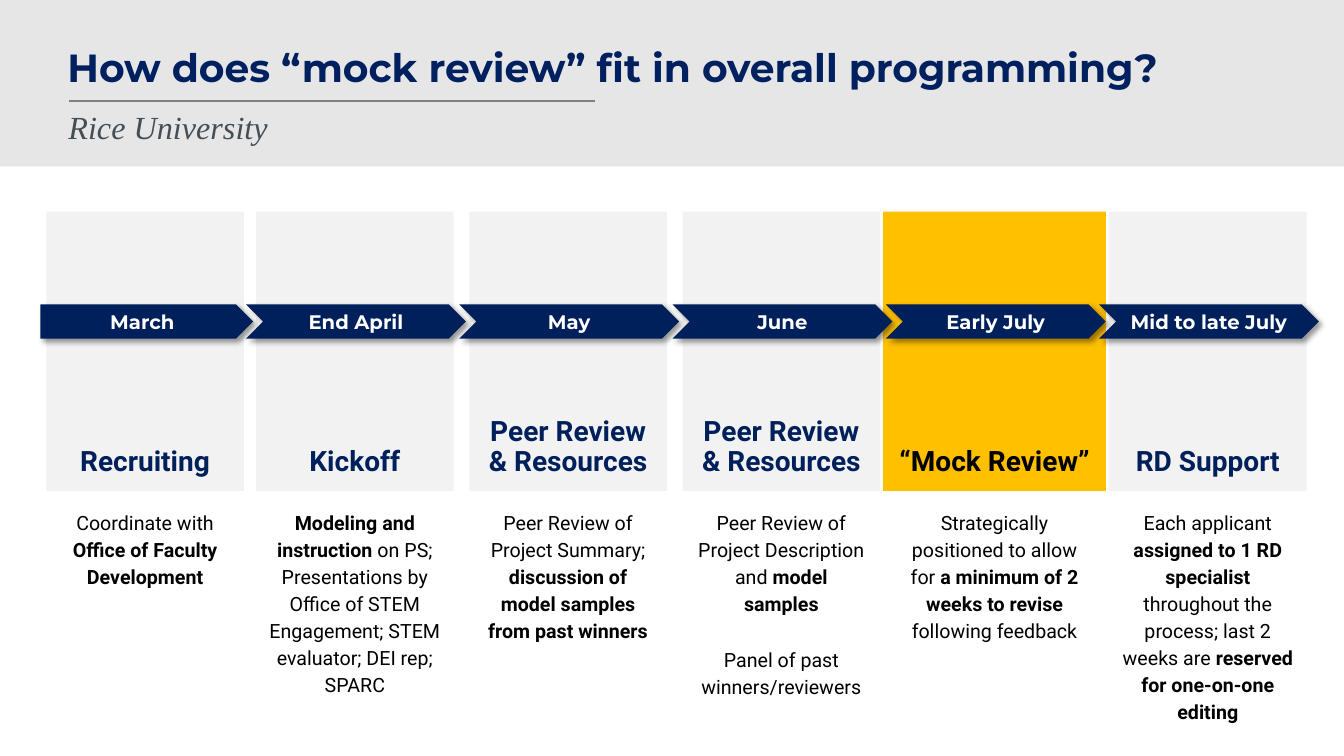
from dataclasses import dataclass

from lxml import etree
from pptx import Presentation
from pptx.dml.color import RGBColor
from pptx.enum.shapes import MSO_CONNECTOR, MSO_SHAPE
from pptx.enum.text import MSO_ANCHOR, PP_ALIGN
from pptx.oxml import parse_xml
from pptx.oxml.ns import nsdecls, qn
from pptx.util import Inches, Pt

RECTANGLE = MSO_SHAPE.RECTANGLE
PENTAGON = MSO_SHAPE.PENTAGON
CHEVRON = MSO_SHAPE.CHEVRON
STRAIGHT = MSO_CONNECTOR.STRAIGHT
TOP, MIDDLE, BOTTOM = MSO_ANCHOR.TOP, MSO_ANCHOR.MIDDLE, MSO_ANCHOR.BOTTOM
LEFT, CENTER = PP_ALIGN.LEFT, PP_ALIGN.CENTER


@dataclass(frozen=True)
class Theme:
    title_navy: str = "002060"
    navy: str = "00205B"
    gold: str = "FFC000"
    band: str = "E6E6E6"
    card: str = "F2F2F2"
    rule: str = "808080"
    subtitle: str = "454D55"
    black: str = "000000"
    white: str = "FFFFFF"
    heading_font: str = "Montserrat"
    body_font: str = "Roboto"
    subtitle_font: str = "Times New Roman"
    title_size: int = 28
    subtitle_size: int = 23
    stage_size: int = 20
    detail_size: int = 14


THEME = Theme()

# Month, stage name, detail paragraphs as (text, bold) runs
STAGES = [
    ("March", "Recruiting",
     [[("Coordinate with ", False), ("Office of Faculty Development", True)]]),
    ("End April", "Kickoff",
     [[("Modeling and instruction ", True),
       ("on PS; Presentations by Office of STEM Engagement; "
        "STEM evaluator; DEI rep; SPARC", False)]]),
    ("May", "Peer Review & Resources",
     [[("Peer Review of Project Summary; ", False),
       ("discussion of model samples from past winners", True)]]),
    ("June", "Peer Review & Resources",
     [[("Peer Review of Project Description and ", False), ("model samples", True)],
      [("Panel of past winners/reviewers", False)]]),
    ("Early July", "“Mock Review”",
     [[("Strategically positioned to allow for ", False),
       ("a minimum of 2 weeks to revise ", True), ("following feedback", False)]]),
    ("Mid to late July", "RD Support",
     [[("Each applicant ", False), ("assigned to 1 RD specialist ", True),
       ("throughout the process; last 2 weeks are ", False),
       ("reserved for one-on-one editing", True)]]),
]
HIGHLIGHT = 4
CARD_WIDTH = 1.96
CARD_LEFTS = [0.46] + [2.54 + 2.115 * step for step in range(5)]


def rgb(value):
    return RGBColor.from_string(value)


def add_block(page, kind, box, fill):
    block = page.shapes.add_shape(kind, *map(Inches, box))
    block.shadow.inherit = False
    block.fill.solid()
    block.fill.fore_color.rgb = rgb(fill)
    block.line.fill.background()
    return block


def write(shape, paragraphs, font, size, color, align=CENTER, anchor=TOP,
          insets=(0.13, 0.13), spacing=1.0, italic=False):
    """Fill a shape with paragraphs of (text, bold) runs."""
    frame = shape.text_frame
    frame.word_wrap = True
    frame.vertical_anchor = anchor
    frame.margin_left = frame.margin_right = Inches(insets[0])
    frame.margin_top = frame.margin_bottom = Inches(insets[1])
    for index, runs in enumerate(paragraphs):
        para = frame.add_paragraph() if index else frame.paragraphs[0]
        para.alignment = align
        para.line_spacing = spacing
        if index:
            para.space_before = Pt(21)
        for text, bold in runs:
            span = para.add_run()
            span.text = text
            span.font.name = font
            span.font.size = Pt(size)
            span.font.bold = bold
            span.font.italic = italic
            span.font.color.rgb = rgb(color)


def add_text(page, box, paragraphs, *style, **options):
    text_box = page.shapes.add_textbox(*map(Inches, box))
    write(text_box, paragraphs, *style, **options)


def add_drop_shadow(shape):
    effects = shape._element.spPr.find(qn("a:effectLst"))
    effects.append(parse_xml(
        f'<a:outerShdw {nsdecls("a")} blurRad="{Pt(4)}" dist="{Pt(3)}" '
        'dir="2700000" algn="tl" rotWithShape="0"><a:srgbClr val="000000">'
        '<a:alpha val="40000"/></a:srgbClr></a:outerShdw>'))


def add_header(page, box):
    left, top, width, height = box
    add_block(page, RECTANGLE, box, THEME.band)
    # Rule between title and subtitle
    rule = page.shapes.add_connector(
        STRAIGHT, Inches(left + 0.68), Inches(top + 1.0),
        Inches(left + 5.9), Inches(top + 1.0))
    rule.line.color.rgb = rgb(THEME.rule)
    rule.line.width = Pt(1.5)
    etree.SubElement(rule._element.spPr, qn("a:effectLst"))
    # Title and subtitle
    add_text(page, (left + 0.57, top + 0.3, 12.51, 0.79),
             [[("How does “mock review” fit in overall programming?", True)]],
             THEME.heading_font, THEME.title_size, THEME.title_navy,
             align=LEFT, anchor=MIDDLE, insets=(0.1, 0.05), spacing=0.9)
    add_text(page, (left + 0.58, top + 1.06, 11.71, 0.45),
             [[("Rice University", False)]],
             THEME.subtitle_font, THEME.subtitle_size, THEME.subtitle,
             align=LEFT, insets=(0.1, 0.05), spacing=0.9, italic=True)


def add_stage(page, box, name, details, highlighted):
    left, top, width, height = box
    # The highlighted card is wider on both sides
    extra = 0.125 if highlighted else 0
    card = add_block(page, RECTANGLE, (left - extra, top, width + 2 * extra, height),
                     THEME.gold if highlighted else THEME.card)
    write(card, [[(name, True)]], THEME.body_font, THEME.stage_size,
          THEME.black if highlighted else THEME.navy, anchor=BOTTOM, spacing=0.9)
    add_text(page, (left, top + height + 0.03, width, 1.99), details,
             THEME.body_font, THEME.detail_size, THEME.black, spacing=1.15)


def add_month(page, box, month, kind):
    arrow = add_block(page, kind, box, THEME.navy)
    add_drop_shadow(arrow)
    write(arrow, [[(month, True)]], THEME.heading_font, THEME.detail_size,
          THEME.white, anchor=MIDDLE, insets=(0, 0))


def add_timeline(page, top):
    # Cards go behind all the month arrows
    for index, (left, (_, name, details)) in enumerate(zip(CARD_LEFTS, STAGES)):
        add_stage(page, (left, top, CARD_WIDTH, 2.77), name, details,
                  index == HIGHLIGHT)
    for index, (left, (month, _, _)) in enumerate(zip(CARD_LEFTS, STAGES)):
        if index == 0:
            add_month(page, (left - 0.06, top + 0.92, 2.11, 0.34), month, PENTAGON)
        else:
            add_month(page, (left - 0.1, top + 0.92, 2.18, 0.34), month, CHEVRON)


def main():
    deck = Presentation()
    deck.slide_width, deck.slide_height = Inches(13.33), Inches(7.5)
    page = deck.slides.add_slide(deck.slide_layouts[6])
    add_header(page, (0, 0, 13.33, 1.65))
    add_timeline(page, 2.1)
    deck.save("out.pptx")


if __name__ == "__main__":
    main()
